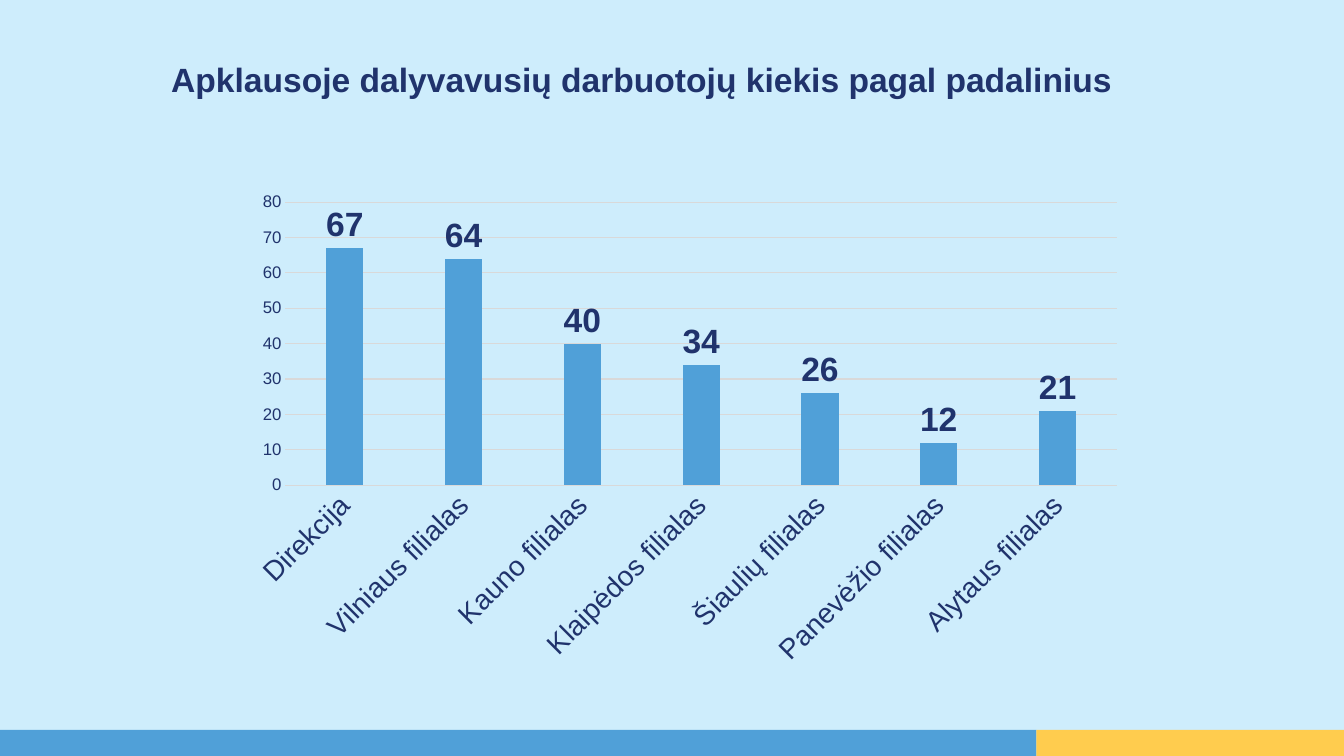
from pptx import Presentation, util as u
from pptx.chart.data import CategoryChartData
from pptx.dml.color import RGBColor
from pptx.enum import chart as kinds, shapes, text

NAVY, BLUE, GOLD, SKY, GREY = "20336C", "50A0D8", "FFCC4E", "CEEDFC", "D9D9D9"
WIDTH, HEIGHT = 33.87, 19.05
COUNTS = {
    "Direkcija": 67,
    "Vilniaus filialas": 64,
    "Kauno filialas": 40,
    "Klaipėdos filialas": 34,
    "Šiaulių filialas": 26,
    "Panevėžio filialas": 12,
    "Alytaus filialas": 21,
}


def paint(fill, color):
    fill.solid()
    fill.fore_color.rgb = RGBColor.from_string(color)


def style(font, size, bold=False):
    font.name = "Arial"
    font.size = u.Pt(size)
    font.bold = bold
    font.color.rgb = RGBColor.from_string(NAVY)


def rule(line):
    line.color.rgb = RGBColor.from_string(GREY)
    line.width = u.Pt(0.75)


def add_title(slide, left, top, width, height):
    title = slide.shapes.title
    title.left, title.top = u.Cm(left), u.Cm(top)
    title.width, title.height = u.Cm(width), u.Cm(height)
    frame = title.text_frame
    frame.text = "Apklausoje dalyvavusių darbuotojų kiekis pagal padalinius"
    frame.word_wrap = True
    frame.auto_size = text.MSO_AUTO_SIZE.NONE
    frame.vertical_anchor = text.MSO_ANCHOR.TOP
    line = frame.paragraphs[0]
    line.alignment = text.PP_ALIGN.JUSTIFY
    line.line_spacing = 1.0
    line.space_before = u.Pt(0)
    style(line.font, 24, True)


def add_bars(slide, left, top, width, height):
    data = CategoryChartData()
    data.categories = COUNTS.keys()
    data.add_series("Series 1", COUNTS.values())
    chart = slide.shapes.add_chart(
        kinds.XL_CHART_TYPE.COLUMN_CLUSTERED,
        u.Cm(left), u.Cm(top), u.Cm(width), u.Cm(height), data,
    ).chart
    style(chart.font, 12)
    chart.has_legend = False
    chart.has_title = False

    plot = chart.plots[0]
    plot.vary_by_categories = False
    plot.gap_width = 219
    plot.overlap = -27
    bars = plot.series[0]
    paint(bars.format.fill, BLUE)
    labels = bars.data_labels
    labels.show_value = True
    labels.position = kinds.XL_LABEL_POSITION.OUTSIDE_END
    style(labels.font, 24, True)

    units, scale = chart.category_axis, chart.value_axis
    for axis, size in ((units, 20), (scale, 12)):
        axis.major_tick_mark = kinds.XL_TICK_MARK.NONE
        axis.minor_tick_mark = kinds.XL_TICK_MARK.NONE
        style(axis.tick_labels.font, size)
    units.format.line.width = u.Pt(0.75)
    rule(units.format.line)
    units._element.txPr.bodyPr.set("rot", "-2700000")
    scale.minimum_scale, scale.maximum_scale = 0, 80
    scale.major_unit = 10
    scale.format.line.fill.background()
    rule(scale.major_gridlines.format.line)


def add_band(slide, left, top, width, height):
    split = 26.12
    for start, end, color in ((0, split, BLUE), (split, width, GOLD)):
        bar = slide.shapes.add_shape(
            shapes.MSO_SHAPE.RECTANGLE,
            u.Cm(left + start), u.Cm(top), u.Cm(end - start), u.Cm(height),
        )
        bar.shadow.inherit = False
        paint(bar.fill, color)
        bar.line.fill.background()


def main():
    deck = Presentation()
    deck.slide_width, deck.slide_height = u.Cm(WIDTH), u.Cm(HEIGHT)
    slide = deck.slides.add_slide(deck.slide_layouts[5])
    paint(slide.background.fill, SKY)
    add_bars(slide, 6.02, 4.62, 22.58, 12.42)
    add_band(slide, 0, 18.39, WIDTH, HEIGHT - 18.39)
    add_title(slide, 4.06, 1.35, 27.5, 1.27)
    deck.save("out.pptx")


if __name__ == "__main__":
    main()
